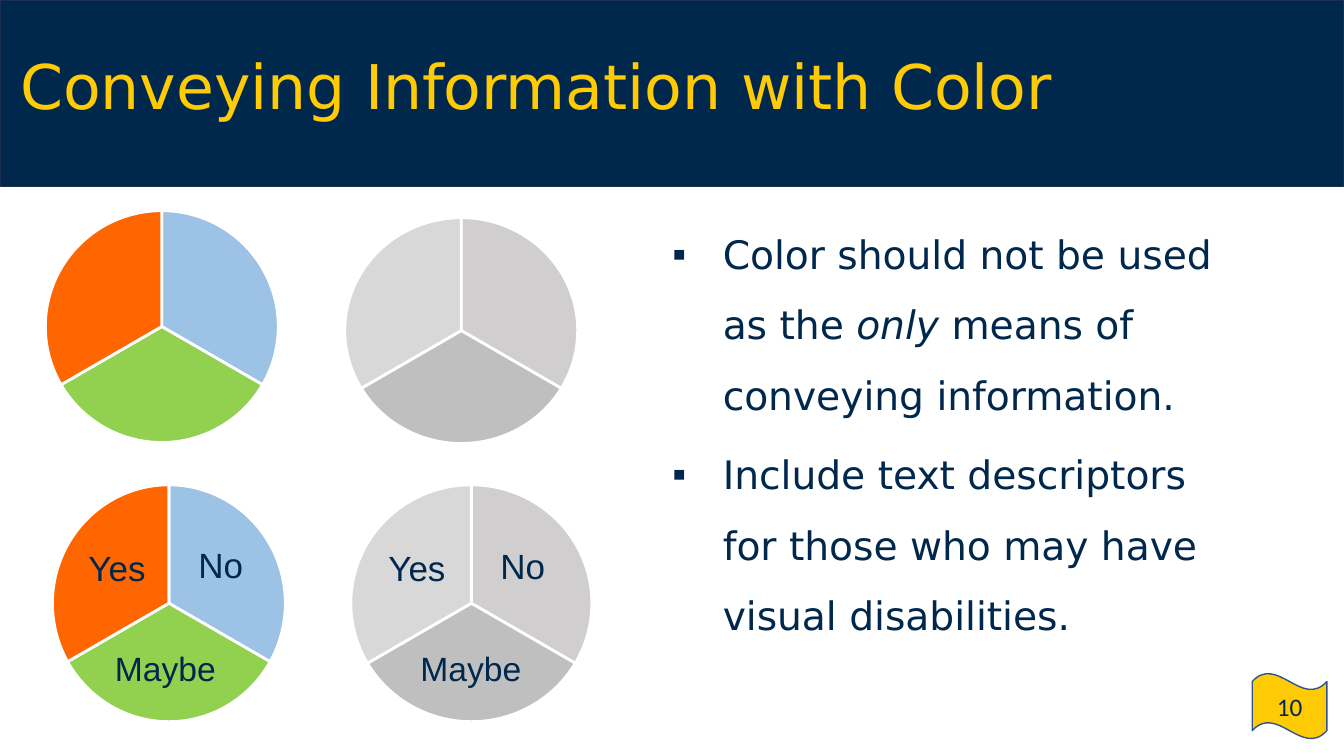
from lxml.etree import SubElement
from pptx import Presentation
from pptx.dml.color import RGBColor
from pptx.enum.shapes import MSO_SHAPE as SHAPE
from pptx.enum.text import MSO_ANCHOR as ANCHOR, PP_ALIGN as ALIGN
from pptx.oxml.ns import qn
from pptx.util import Pt

PX = 9144  # 100 px to the inch
NAVY, GOLD, WHITE = "00274C", "FFCB05", "FFFFFF"
COLORED = ["9CC2E5", "92D050", "FF6600"]
GRAYS = ["D0CECE", "BFBFBF", "D8D8D8"]


def add_box(parent, bounds, preset=None, fill=None, line=None, width=1):
    """Add a preset shape, or a text box when no preset is given."""
    left, top, wide, high = [length * PX for length in bounds]
    if preset is None:
        box = parent.add_textbox(left, top, wide, high)
    else:
        box = parent.add_shape(preset, left, top, wide, high)
        box.shadow.inherit = False
        box.fill.solid()
        box.fill.fore_color.rgb = RGBColor.from_string(fill)
        box.line.color.rgb = RGBColor.from_string(line)
        box.line.width = Pt(width)
    box.text_frame.word_wrap = True
    return box


def add_span(para, text, size, font, color=NAVY, italic=False):
    span = para.add_run()
    span.text = text
    span.font.size = Pt(size)
    span.font.name = font
    span.font.italic = italic
    span.font.color.rgb = RGBColor.from_string(color)


deck = Presentation()
deck.slide_width, deck.slide_height = 1333 * PX, 750 * PX
page = deck.slides.add_slide(deck.slide_layouts[6])

# Banner, page number and title
add_box(page.shapes, (0, 0, 1333, 185), SHAPE.RECTANGLE, NAVY, "1C3052")
flag = add_box(page.shapes, (1242, 668, 74, 65), SHAPE.WAVE, GOLD, "31538F")
flag.text_frame.vertical_anchor = ANCHOR.MIDDLE
para = flag.text_frame.paragraphs[0]
para.alignment = ALIGN.CENTER
add_span(para, "10", 18, "Calibri")

title = add_box(page.shapes, (10, 16, 1092, 145))
title.text_frame.vertical_anchor = ANCHOR.MIDDLE
para = title.text_frame.paragraphs[0]
para.line_spacing = 0.9
add_span(para, "Conveying Information with Color", 44, "DejaVu Sans", GOLD)

# Pies: bounds, slice colors, and labels as text, size and bounds
pies = [
    ((45, 209, 231, 230), COLORED, []),
    ((342, 216, 231, 224), GRAYS, []),
    ((52, 481, 231, 235), COLORED, [
        ("No", 25, (180, 524, 78, 78)),
        ("Maybe", 24, (102, 630, 124, 71)),
        ("Yes", 25, (77, 527, 78, 78))]),
    ((348, 481, 239, 235), GRAYS, [
        ("No", 25, (478, 525, 81, 78)),
        ("Maybe", 24, (413, 629, 108, 73)),
        ("Yes", 25, (373, 527, 81, 78))]),
]
SLICE_ANGLES = [(270, 30), (30, 150), (150, 270)]
ANGLE_UNIT = 0.6  # one degree as an adjustment value

for bounds, colors, labels in pies:
    pie = page.shapes.add_group_shape()
    for color, (start, end) in zip(colors, SLICE_ANGLES):
        part = add_box(pie.shapes, bounds, SHAPE.PIE, color, WHITE, 2)
        part.adjustments[0] = start * ANGLE_UNIT
        part.adjustments[1] = end * ANGLE_UNIT
    for text, size, place in labels:
        frame = add_box(pie.shapes, place).text_frame
        frame.vertical_anchor = ANCHOR.MIDDLE
        frame.margin_left = frame.margin_right = 3 * PX
        frame.margin_top = frame.margin_bottom = 3 * PX
        para = frame.paragraphs[0]
        para.alignment = ALIGN.CENTER
        para.line_spacing = 0.9
        add_span(para, text, size, "Arial")

# Bulleted advice: each span is text and whether it is italic
advice = [
    [("Color should not be used as the ", False), ("only", True),
     (" means of conveying information.", False)],
    [("Include text descriptors for those who may have visual disabilities.",
      False)],
]
frame = add_box(page.shapes, (645, 200, 589, 476)).text_frame
for index, spans in enumerate(advice):
    para = frame.add_paragraph() if index else frame.paragraphs[0]
    para.line_spacing = 1.5
    para.space_before = Pt(6)
    props = para._p.get_or_add_pPr()
    props.set("marL", str(62 * PX))
    props.set("indent", str(-50 * PX))
    bullet_color = SubElement(props, qn("a:buClr"))
    SubElement(bullet_color, qn("a:srgbClr"), val=NAVY)
    SubElement(props, qn("a:buFont"), typeface="Arial")
    SubElement(props, qn("a:buChar"), char="▪")
    for text, italic in spans:
        add_span(para, text, 28, "DejaVu Sans", italic=italic)

deck.save("out.pptx")
